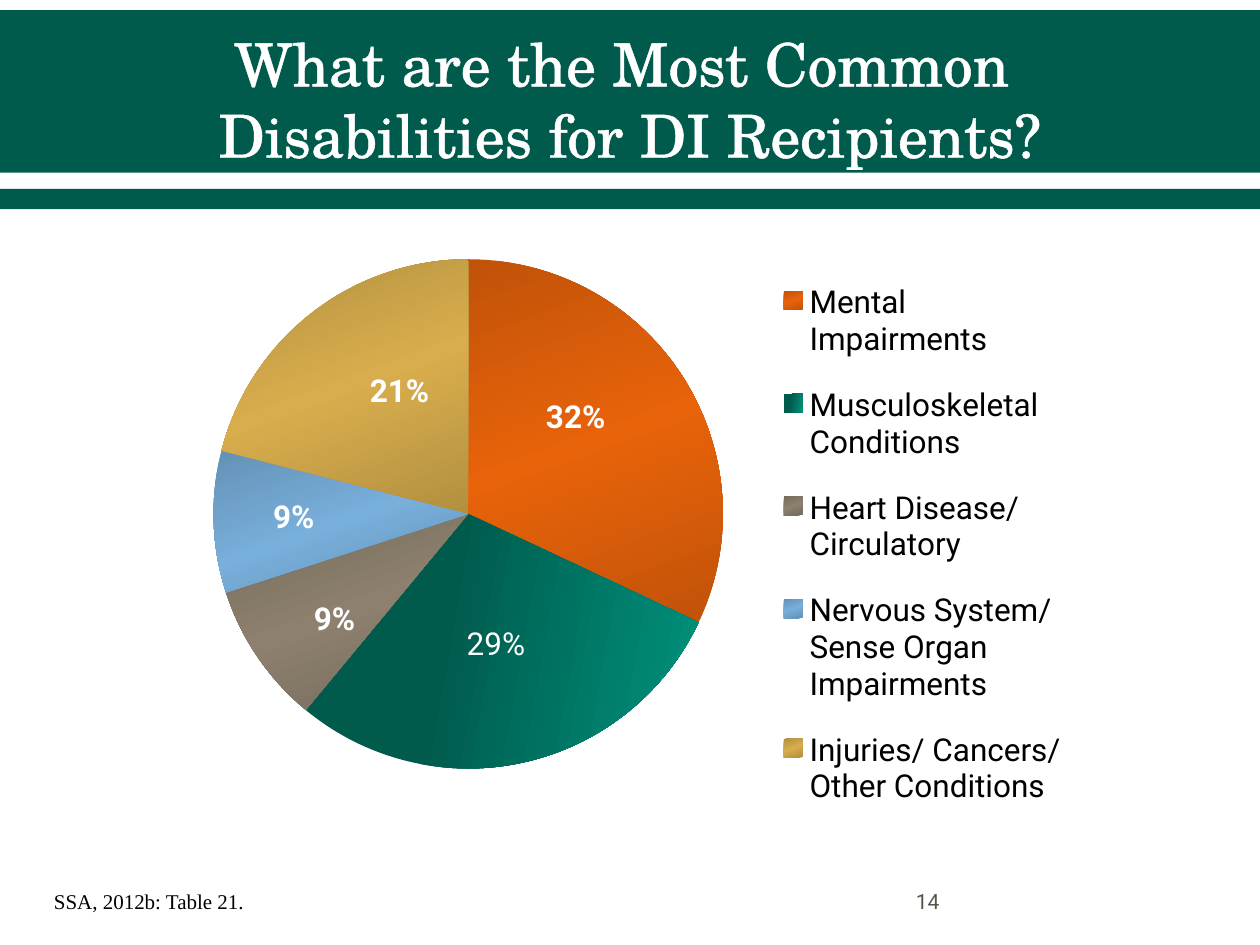
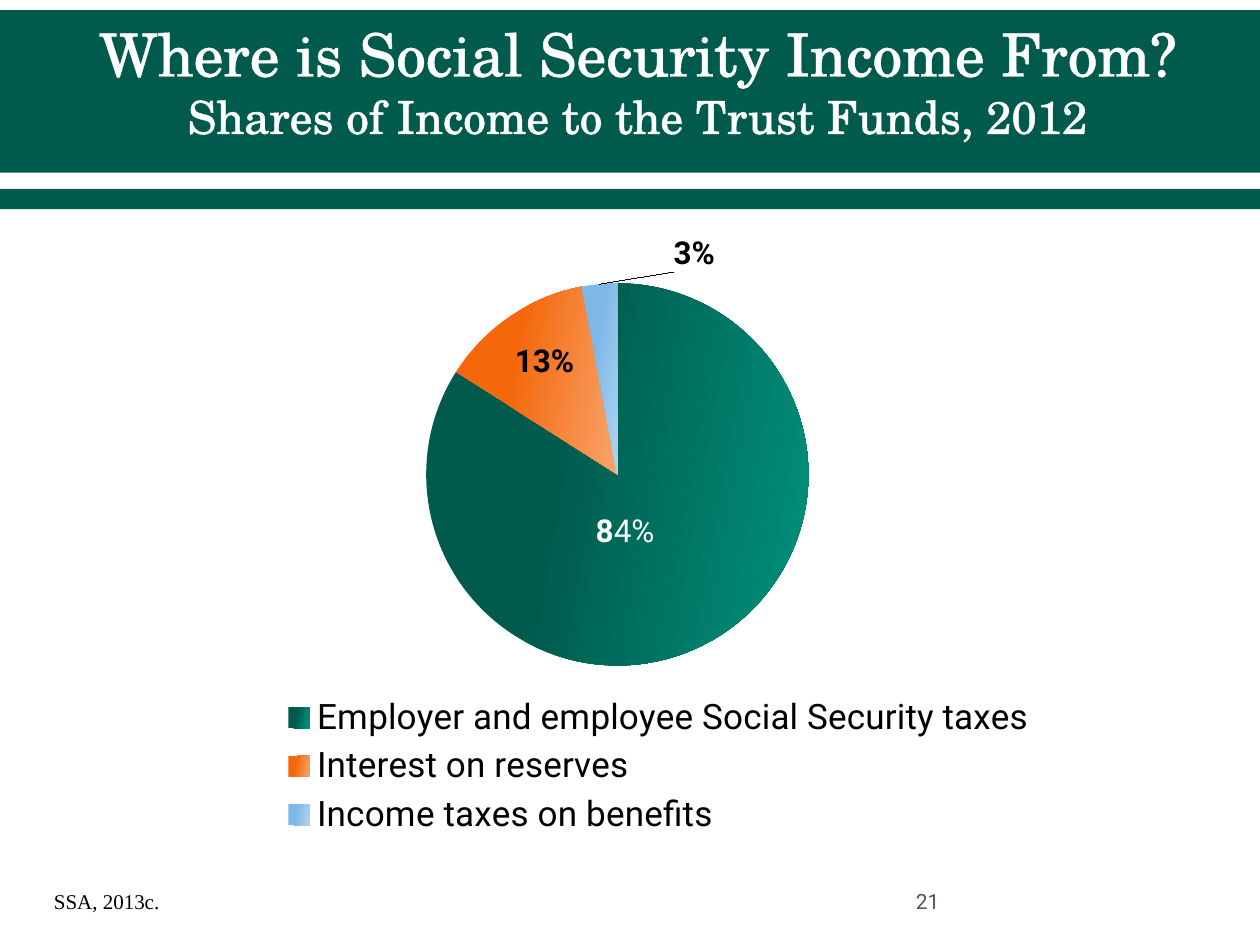
from pptx import Presentation
from pptx.chart.data import CategoryChartData
from pptx.dml.color import RGBColor
from pptx.enum.chart import XL_CHART_TYPE, XL_LABEL_POSITION, XL_LEGEND_POSITION
from pptx.enum.shapes import MSO_SHAPE
from pptx.enum.text import MSO_ANCHOR, MSO_AUTO_SIZE, PP_ALIGN
from pptx.oxml import parse_xml
from pptx.oxml.ns import nsdecls
from pptx.util import Inches, Pt

GREEN, TEAL, ORANGE, BLUE = "005B4D", "00927D", "F4680B", "7EB8E7"
TAUPE, GOLD = "948774", "E3B651"
WHITE, BLACK, GREY = "FFFFFF", "000000", "55554A"
TITLE_FONT, BODY_FONT, SOURCE_FONT = "TeX Gyre Schola", "Roboto", "Times New Roman"
BANDS = [(0.08, 1.29), (1.5, 0.16)]  # top, height
LABEL_SIZE = 18


def blend(colour):
    """Even colour that changes from about a third of the way on."""
    start, end = colour
    return 10, [(0, start), (36, start), (100, end)]


def sheen(colour):
    """Bright middle between two darker edges."""
    def shade(share):
        return "".join(f"{round(int(colour[i:i + 2], 16) * share):02X}" for i in (0, 2, 4))
    return 70, [(0, shade(0.79)), (50, shade(0.95)), (100, shade(0.79))]


# Each slice: category, value, gradient, label runs (None = automatic),
# label colour, label shift as shares of the chart.
SLIDES = [
    {
        "title": [("What are the Most Common ", 34), ("Disabilities for DI Recipients?", 34)],
        "title_box": (0.5, 0.17, 9, 1.22),
        "source": "SSA, 2012b: Table 21.",
        "page": "14",
        "chart_box": (1.17, 1.42, 7.5, 5.54),
        "plot": (0.07, 0.115, 0.539, 0.73),
        "legend": (XL_LEGEND_POSITION.RIGHT, 18, (0.66, 0.11, 0.32, 0.83)),
        "percent": True,
        "format": "General",
        "slices": [
            ("Mental Impairments", 32, sheen(ORANGE), None, WHITE, (0, -0.04)),
            ("Musculoskeletal Conditions", 29, blend((GREEN, TEAL)),
             [("29%", False)], WHITE, (0, 0.01)),
            ("Heart Disease/ Circulatory", 9, sheen(TAUPE), None, WHITE, (-0.03, 0.05)),
            ("Nervous System/ Sense Organ Impairments", 9, sheen(BLUE),
             None, WHITE, (-0.05, 0)),
            ("Injuries/ Cancers/ Other Conditions", 21, sheen(GOLD),
             None, WHITE, (0.01, -0.03)),
        ],
    },
    {
        "title": [("Where is Social Security Income From?", 34),
                  ("Shares of Income to the Trust Funds, 2012", 26)],
        "title_box": (0.4, 0.01, 9.33, 1.25),
        "source": "SSA, 2013c.",
        "page": "21",
        "chart_box": (1.25, 1.75, 7.58, 5.25),
        "plot": (0.275, 0.095, 0.413, 0.578),
        "legend": (XL_LEGEND_POSITION.BOTTOM, 20, (0.11, 0.71, 0.83, 0.23)),
        "percent": False,
        "format": "0%",
        "slices": [
            ("Employer and employee Social Security taxes", 0.84, blend((GREEN, TEAL)),
             [("8", True), ("4%", False)], WHITE, (-0.04, -0.04)),
            ("Interest on reserves", 0.13, blend((ORANGE, "F8A46D")),
             None, BLACK, (-0.02, -0.05)),
            ("Income taxes on benefits", 0.03, blend((BLUE, "B2D4F1")),
             None, BLACK, (0.09, -0.19)),
        ],
    },
]


def rgb(colour):
    return RGBColor.from_string(colour)


def set_all(target, values):
    for name, value in values.items():
        setattr(target, name, value)


def set_font(font, name, size, colour, bold=False):
    set_all(font, {"name": name, "size": Pt(size), "bold": bold})
    font.color.rgb = rgb(colour)


def inches(box):
    return [Inches(length) for length in box]


def add_bands(slide, layout):
    """Draw the green bands once and hand them to the shared layout."""
    for top, height in BANDS:
        band = slide.shapes.add_shape(MSO_SHAPE.RECTANGLE, *inches((0, top, 10, height)))
        band.shadow.inherit = False
        band.fill.solid()
        band.fill.fore_color.rgb = rgb(GREEN)
        band.line.fill.background()
        layout.shapes._spTree.insert(2, band._element)


def write_title(title, lines, box):
    set_all(title, dict(zip(("left", "top", "width", "height"), inches(box))))
    frame = title.text_frame
    set_all(frame, {"word_wrap": True, "auto_size": MSO_AUTO_SIZE.NONE,
                    "vertical_anchor": MSO_ANCHOR.MIDDLE})
    paragraph = frame.paragraphs[0]
    paragraph.alignment = PP_ALIGN.CENTER
    for number, (text, size) in enumerate(lines):
        if number:
            paragraph.add_line_break()
        run = paragraph.add_run()
        run.text = text
        set_font(run.font, TITLE_FONT, size, WHITE)
        outline = (f'<a:ln {nsdecls("a")} w="{Pt(1.1)}"><a:solidFill>'
                   f'<a:srgbClr val="{WHITE}"/></a:solidFill></a:ln>')
        run._r.get_or_add_rPr().insert(0, parse_xml(outline))


def add_note(slide, text, box, font, colour, wrap):
    frame = slide.shapes.add_textbox(*inches(box)).text_frame
    set_all(frame, {"word_wrap": wrap, "vertical_anchor": MSO_ANCHOR.MIDDLE})
    run = frame.paragraphs[0].add_run()
    run.text = text
    set_font(run.font, font, 12, colour)


def set_layout(parent, index, values, inner=False):
    """Place a chart part by shares of the chart: x, y and perhaps w, h."""
    for old in parent.xpath("c:layout"):
        parent.remove(old)
    parts = '<c:layoutTarget val="inner"/>' if inner else ""
    if len(values) == 4:
        parts += '<c:xMode val="edge"/><c:yMode val="edge"/>'
    parts += "".join(f'<c:{name} val="{value}"/>' for name, value in zip("xywh", values))
    parent.insert(index, parse_xml(
        f'<c:layout {nsdecls("c")}><c:manualLayout>{parts}</c:manualLayout></c:layout>'))


def fill_gradient(properties, angle, stops):
    solid = properties.xpath("a:solidFill")[0]
    marks = "".join(f'<a:gs pos="{place * 1000}"><a:srgbClr val="{colour}"/></a:gs>'
                    for place, colour in stops)
    properties.replace(solid, parse_xml(
        f'<a:gradFill {nsdecls("a")} rotWithShape="1"><a:gsLst>{marks}</a:gsLst>'
        f'<a:lin ang="{angle * 60000}" scaled="0"/></a:gradFill>'))


def add_pie(slide, content):
    slices = content["slices"]
    data = CategoryChartData(number_format=content["format"])
    data.categories = [item[0] for item in slices]
    data.add_series("Series 1", [item[1] for item in slices])
    chart = slide.shapes.add_chart(
        XL_CHART_TYPE.PIE, *inches(content["chart_box"]), data).chart
    chart.has_title = False
    set_font(chart.font, BODY_FONT, LABEL_SIZE, BLACK)
    plot = chart.plots[0]
    plot.vary_by_categories = True
    space = chart._chartSpace
    set_layout(space.xpath("//c:plotArea")[0], 0, content["plot"], inner=True)

    position, size, box = content["legend"]
    chart.has_legend = True
    set_all(chart.legend, {"position": position, "include_in_layout": False})
    set_font(chart.legend.font, BODY_FONT, size, BLACK)
    set_layout(chart.legend._element, 1, box)

    series = plot.series[0]
    percent = content["percent"]
    labels = series.data_labels
    set_all(labels, {"show_percentage": percent, "show_value": not percent,
                     "number_format": "0%", "number_format_is_linked": False,
                     "position": XL_LABEL_POSITION.CENTER})
    set_font(labels.font, BODY_FONT, LABEL_SIZE, BLACK, True)
    for index, (_, _, gradient, runs, colour, shift) in enumerate(slices):
        point = series.points[index]
        point.format.fill.solid()
        point.format.line.fill.background()
        fill_gradient(space.xpath("//c:dPt/c:spPr")[index], *gradient)
        label = point.data_label
        if runs:
            paragraph = label.text_frame.paragraphs[0]
            for text, bold in runs:
                run = paragraph.add_run()
                run.text = text
                set_font(run.font, BODY_FONT, LABEL_SIZE, colour, bold)
        else:
            set_font(label.font, BODY_FONT, LABEL_SIZE, colour, True)
        label.position = XL_LABEL_POSITION.CENTER
        element = space.xpath("//c:dLbl")[index]
        set_layout(element, 1, shift)
        for tag, shown in (("showVal", not percent), ("showPercent", percent)):
            element.xpath(f"c:{tag}")[0].set("val", str(int(shown)))


def main():
    presentation = Presentation()
    presentation.slide_width, presentation.slide_height = inches((10, 7.5))
    layout = presentation.slide_layouts.get_by_name("Title Only")
    for number, content in enumerate(SLIDES):
        slide = presentation.slides.add_slide(layout)
        if number == 0:
            add_bands(slide, layout)
        write_title(slide.shapes.title, content["title"], content["title_box"])
        add_pie(slide, content)
        add_note(slide, content["source"], (0.33, 7, 1.73, 0.3), SOURCE_FONT, BLACK, False)
        add_note(slide, content["page"], (7.17, 6.95, 2.33, 0.4), BODY_FONT, GREY, True)
    presentation.save("out.pptx")


if __name__ == "__main__":
    main()
